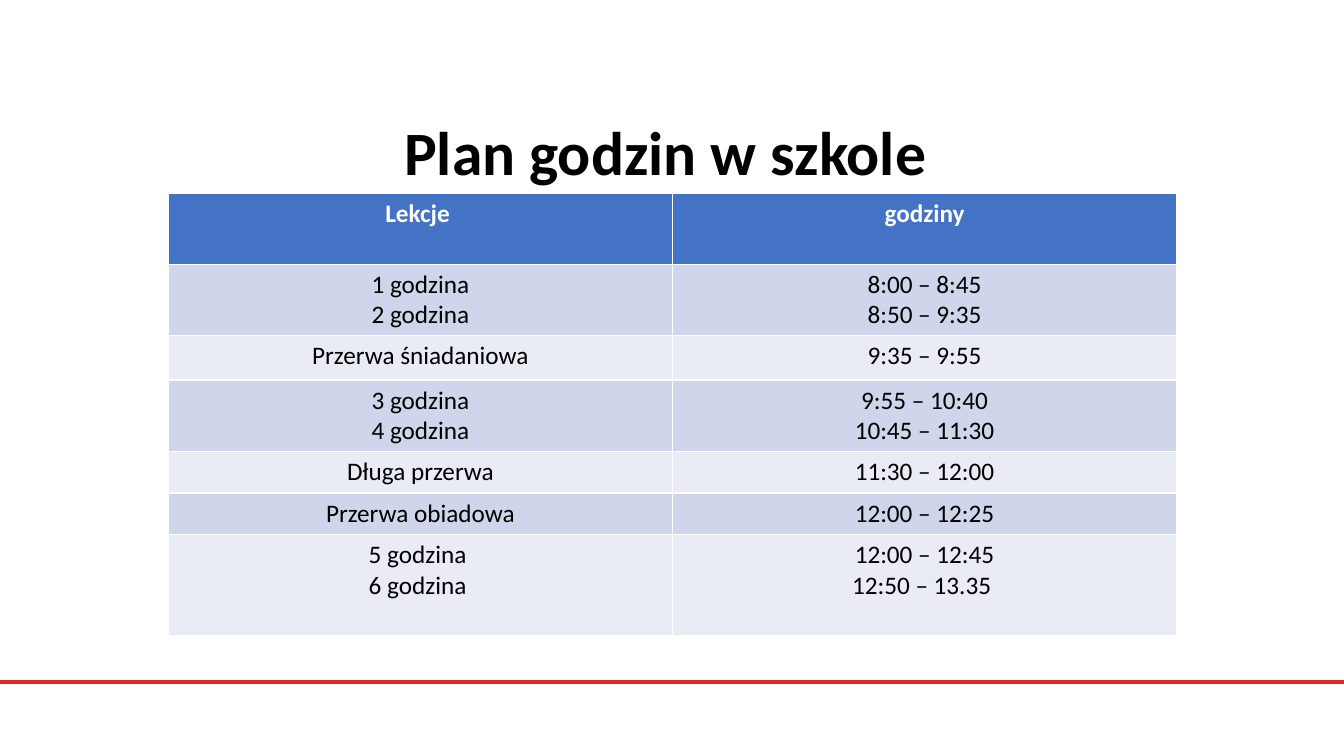
from lxml import etree
from pptx import Presentation
from pptx.dml.color import RGBColor
from pptx.enum.shapes import MSO_CONNECTOR as Connector
from pptx.enum.text import MSO_ANCHOR as Anchor, MSO_AUTO_SIZE as AutoSize, PP_ALIGN as Align
from pptx.oxml.ns import qn
from pptx.util import Inches, Pt

SLIDE_W, SLIDE_H = 13.33, 7.5
LEFT, WIDTH = 1.67, 10
HEADER_FILL, BAND_FILLS = "4472C4", ("CFD5EA", "E9EBF5")

# Lessons, hours, row height in inches
TIMETABLE = [
    ("Lekcje ", "godziny", 0.7),
    ("1 godzina\n2 godzina", "8:00 – 8:45\n8:50 – 9:35", 0.71),
    ("Przerwa śniadaniowa", "9:35 – 9:55", 0.44),
    ("3 godzina\n4 godzina", "9:55 – 10:40\n10:45 – 11:30", 0.71),
    ("Długa przerwa", "11:30 – 12:00", 0.41),
    ("Przerwa obiadowa", "12:00 – 12:25", 0.41),
    ("5 godzina \n6 godzina ", "12:00 – 12:45\n12:50 – 13.35 ", 1.0),
]


def color(hex_value):
    return RGBColor.from_string(hex_value)


def write(frame, text, size, hex_value, bold):
    frame.text = text
    for line in frame.paragraphs:
        line.alignment = Align.CENTER
        for run in line.runs:
            font = run.font
            font.name, font.size, font.bold = "Calibri", Pt(size), bold
            font.color.rgb = color(hex_value)


def add_heading(slide, left, top, width, height):
    heading = slide.shapes.title
    heading.left, heading.top = Inches(left), Inches(top)
    heading.width, heading.height = Inches(width), Inches(height)
    frame = heading.text_frame
    frame.auto_size = AutoSize.NONE
    frame.vertical_anchor = Anchor.BOTTOM
    write(frame, "Plan godzin w szkole ", 44, "000000", True)
    frame.paragraphs[0].line_spacing = 0.9


def add_timetable(slide, left, top, width):
    height = sum(row[-1] for row in TIMETABLE)
    table = slide.shapes.add_table(len(TIMETABLE), 2, Inches(left), Inches(top),
                                   Inches(width), Inches(height)).table
    for r, (lessons, hours, row_height) in enumerate(TIMETABLE):
        table.rows[r].height = Inches(row_height)
        is_header = r == 0
        for c, text in enumerate((lessons, hours)):
            cell = table.cell(r, c)
            cell.fill.solid()
            cell.fill.fore_color.rgb = color(HEADER_FILL if is_header else BAND_FILLS[(r - 1) % 2])
            write(cell.text_frame, text, 18, "FFFFFF" if is_header else "000000", is_header)


def add_footer_rule(slide, left, top, width):
    rule = slide.shapes.add_connector(Connector.STRAIGHT, Inches(left), Inches(top),
                                      Inches(left + width), Inches(top))
    rule.line.color.rgb = color("E22626")
    rule.line.width = Pt(3)
    # An empty effect list turns the shadow off
    etree.SubElement(rule._element.spPr, qn("a:effectLst"))


def main():
    deck = Presentation()
    deck.slide_width, deck.slide_height = Inches(SLIDE_W), Inches(SLIDE_H)
    slide = deck.slides.add_slide(deck.slide_layouts[0])
    subtitle = slide.placeholders[1]._element
    subtitle.getparent().remove(subtitle)

    add_footer_rule(slide, 0, 6.77, SLIDE_W)
    add_heading(slide, LEFT, 1.23, WIDTH, 0.69)
    add_timetable(slide, LEFT, 1.92, WIDTH)
    deck.save("out.pptx")


if __name__ == "__main__":
    main()
